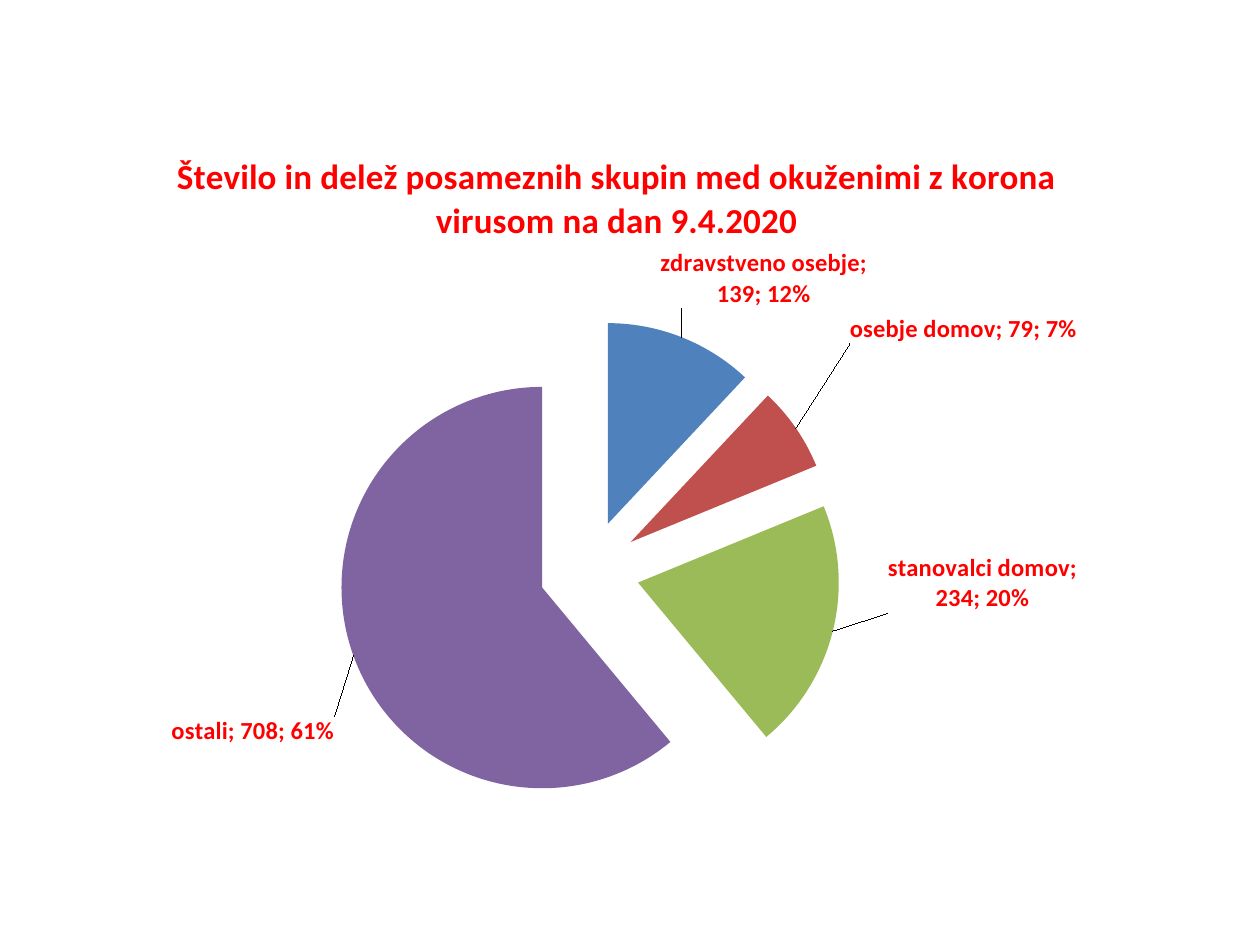
from lxml import etree
from pptx import Presentation
from pptx.chart import data
from pptx.dml import color
from pptx.enum import chart as kinds
from pptx.oxml import ns
from pptx.util import Cm, Pt

TITLE = "Število in delež posameznih skupin med okuženimi z korona virusom na dan 9.4.2020"
GROUPS = [
    ("zdravstveno osebje", 139, "4F81BD", (-0.02, -0.03)),
    ("osebje domov", 79, "C0504D", (0.04, -0.11)),
    ("stanovalci domov", 234, "9BBB59", (0.04, -0.11)),
    ("ostali", 708, "8064A2", (-0.01, 0.08)),
]
SHOWN = {"showVal": "1", "showCatName": "1", "showPercent": "1"}


def rgb(value):
    """Turn a hex string into a colour."""
    return color.RGBColor.from_string(value)


def format_font(font, size, value, bold):
    """Apply size, colour and weight to a font."""
    for key, setting in {"name": "Calibri", "size": Pt(size), "bold": bold}.items():
        setattr(font, key, setting)
    font.color.rgb = rgb(value)


def element(tag, value=None):
    """Create a chart element with an optional val attribute."""
    node = etree.Element(ns.qn("c:" + tag))
    if value is not None:
        node.set("val", str(value))
    return node


def place(parent, after, **fractions):
    """Give a chart part a manual layout, right after the named child."""
    for old in parent.findall(ns.qn("c:layout")):
        parent.remove(old)
    layout = element("layout")
    manual = etree.SubElement(layout, ns.qn("c:manualLayout"))
    for tag, value in fractions.items():
        manual.append(element(tag, value))
    if after:
        parent.find(ns.qn("c:" + after)).addnext(layout)
    else:
        parent.insert(0, layout)


def show_parts(labels):
    """Show category, value and share, separated by semicolons."""
    for tag, value in SHOWN.items():
        labels.find(ns.qn("c:" + tag)).set("val", value)
    separator = element("separator")
    separator.text = "; "
    labels.find(ns.qn("c:showBubbleSize")).addnext(separator)


def label_slices(series):
    """Colour the slices and move each label to its place."""
    format_font(series.data_labels.font, 14, "FF0000", True)
    for index, (_, _, fill, _) in enumerate(GROUPS):
        point = series.points[index]
        point.format.fill.solid()
        point.format.fill.fore_color.rgb = rgb(fill)
        format_font(point.data_label.font, 14, "FF0000", True)
        point.data_label.position = kinds.XL_LABEL_POSITION.OUTSIDE_END
    all_labels = series._element.find(ns.qn("c:dLbls"))
    show_parts(all_labels)
    for label, (_, _, _, (x, y)) in zip(all_labels.findall(ns.qn("c:dLbl")), GROUPS):
        show_parts(label)
        place(label, "idx", x=x, y=y)


def add_infection_pie(slide, left, top, width, height):
    """Draw the exploded pie of infected groups in the given box."""
    shares = data.CategoryChartData()
    shares.categories = [group[0] for group in GROUPS]
    shares.add_series("Series 1", [group[1] for group in GROUPS])
    pie = slide.shapes.add_chart(
        kinds.XL_CHART_TYPE.PIE, left, top, width, height, shares
    ).chart
    format_font(pie.font, 10, "000000", False)
    pie.has_legend = False
    pie.has_title = True
    heading = pie.chart_title.text_frame
    heading.text = TITLE
    format_font(heading.paragraphs[0].runs[0].font, 20, "FF0000", True)
    place(pie.chart_title._element, "tx", xMode="edge", yMode="edge", x=0.13, y=0.04)
    plot = pie.plots[0]
    plot.vary_by_categories = True
    series = plot.series[0]
    series._element.find(ns.qn("c:tx")).addnext(element("explosion", 25))
    label_slices(series)
    place(
        pie._chartSpace.find(".//" + ns.qn("c:plotArea")), None,
        layoutTarget="inner", xMode="edge", yMode="edge",
        x=0.27, y=0.28, w=0.42, h=0.69,
    )


def main():
    """Build the one-slide presentation."""
    deck = Presentation()
    deck.slide_width, deck.slide_height = Cm(25.4), Cm(19.05)
    slide = deck.slides.add_slide(deck.slide_layouts[6])
    add_infection_pie(slide, Cm(0.3), Cm(2.34), Cm(24.13), Cm(14.66))
    deck.save("out.pptx")


if __name__ == "__main__":
    main()
